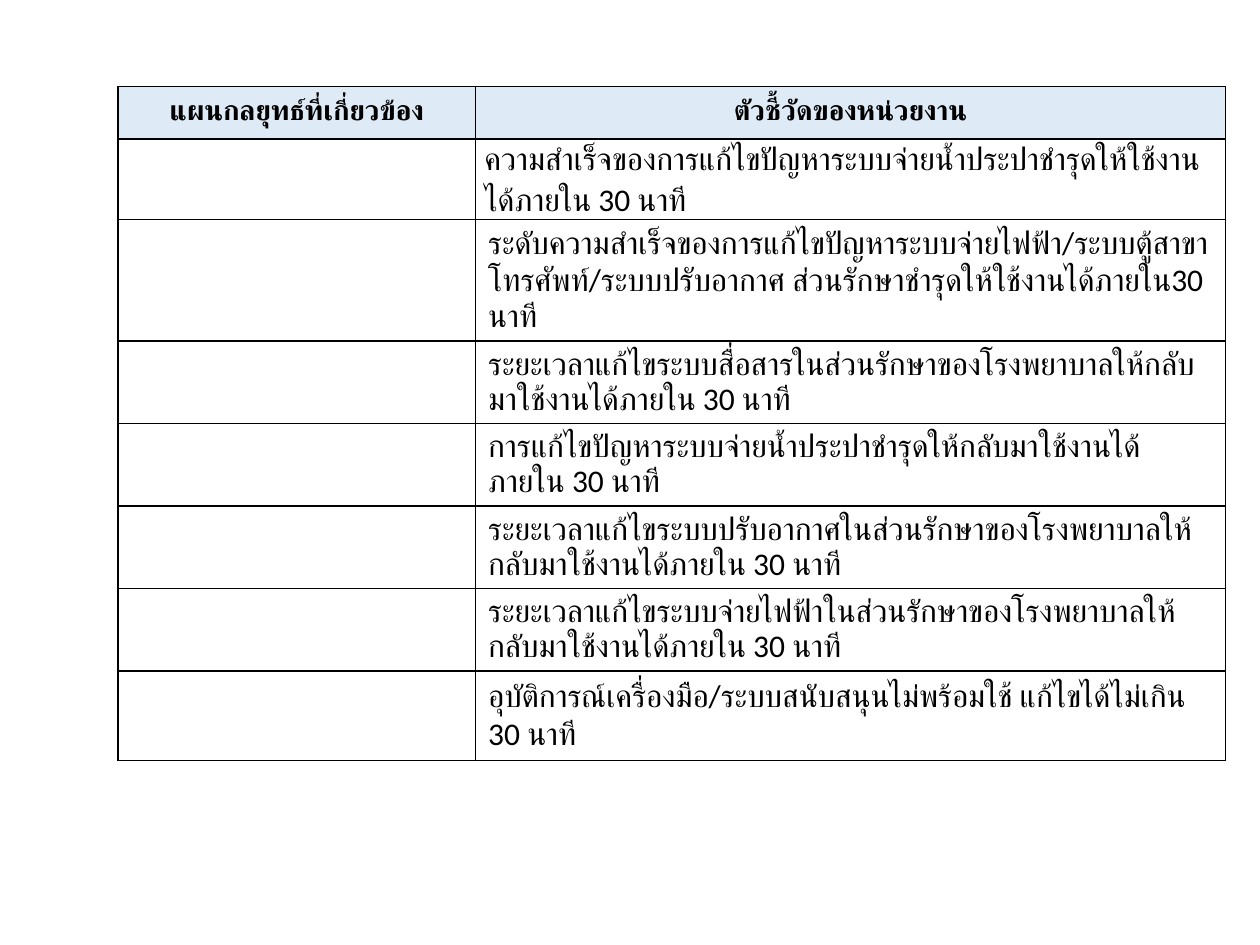
from lxml.etree import SubElement
from pptx import Presentation
from pptx.dml.color import RGBColor
from pptx.enum.text import MSO_ANCHOR, PP_ALIGN
from pptx.oxml.ns import qn
from pptx.util import Pt

COLORS = {"text": "000000", "border": "000000", "header": "DEEBF7"}
COLUMN_WIDTHS = [204.5, 428.4]
HEADER_HEIGHT = 30
ROW_HEIGHT = 21.6
HEADERS = ["แผนกลยุทธ์ที่เกี่ยวข้อง", "ตัวชี้วัดของหน่วยงาน"]
# Each indicator with its line spacing
INDICATORS = [
    ("ความสำเร็จของการแก้ไขปัญหาระบบจ่ายน้ำประปาชำรุดให้ใช้งานได้ภายใน 30 นาที", 1.05),
    ("ระดับความสำเร็จของการแก้ไขปัญหาระบบจ่ายไฟฟ้า/ระบบตู้สาขาโทรศัพท์/ระบบปรับอากาศ ส่วนรักษาชำรุดให้ใช้งานได้ภายใน30 นาที", 0.94),
    ("ระยะเวลาแก้ไขระบบสื่อสารในส่วนรักษาของโรงพยาบาลให้กลับมาใช้งานได้ภายใน 30 นาที", 0.91),
    ("การแก้ไขปัญหาระบบจ่ายน้ำประปาชำรุดให้กลับมาใช้งานได้ภายใน 30 นาที", 0.91),
    ("ระยะเวลาแก้ไขระบบปรับอากาศในส่วนรักษาของโรงพยาบาลให้กลับมาใช้งานได้ภายใน 30 นาที", 0.91),
    ("ระยะเวลาแก้ไขระบบจ่ายไฟฟ้าในส่วนรักษาของโรงพยาบาลให้กลับมาใช้งานได้ภายใน 30 นาที", 0.91),
    ("อุบัติการณ์เครื่องมือ/ระบบสนับสนุนไม่พร้อมใช้ แก้ไขได้ไม่เกิน 30 นาที", 1.0),
]


def write_text(cell, text, font="Calibri", size=18, bold=False,
               align=PP_ALIGN.LEFT, line_spacing=None):
    para = cell.text_frame.paragraphs[0]
    para.alignment = align
    para.line_spacing = line_spacing
    span = para.add_run()
    span.text = text
    span.font.name = font
    span.font.size = Pt(size)
    span.font.bold = bold
    span.font.color.rgb = RGBColor.from_string(COLORS["text"])
    # Thai is drawn with the complex-script font
    SubElement(span.font._element, qn("a:cs"), typeface=font)


def add_borders(cell):
    properties = cell._tc.get_or_add_tcPr()
    for index, side in enumerate(("lnL", "lnR", "lnT", "lnB")):
        line = SubElement(properties, qn(f"a:{side}"), w=str(Pt(1)))
        fill = SubElement(line, qn("a:solidFill"))
        SubElement(fill, qn("a:srgbClr"), val=COLORS["border"])
        properties.insert(index, line)


def style_cell(cell, fill=None):
    if fill:
        cell.fill.solid()
        cell.fill.fore_color.rgb = RGBColor.from_string(fill)
    else:
        cell.fill.background()
    add_borders(cell)


def add_indicator_table(page):
    row_count = len(INDICATORS) + 1
    table = page.shapes.add_table(
        row_count, len(HEADERS), Pt(67.3), Pt(49.4), Pt(sum(COLUMN_WIDTHS)),
        Pt(HEADER_HEIGHT + ROW_HEIGHT * len(INDICATORS))).table
    table.first_row = table.horz_banding = False
    for column, width in zip(table.columns, COLUMN_WIDTHS):
        column.width = Pt(width)
    for index, row in enumerate(table.rows):
        row.height = Pt(ROW_HEIGHT if index else HEADER_HEIGHT)
        for cell in row.cells:
            style_cell(cell, None if index else COLORS["header"])

    for cell, header in zip(table.rows[0].cells, HEADERS):
        cell.vertical_anchor = MSO_ANCHOR.MIDDLE
        cell.margin_top, cell.margin_bottom = Pt(2.5), Pt(4.8)
        write_text(cell, header, font="Cabin", size=16, bold=True,
                   align=PP_ALIGN.CENTER)
    for index, (indicator, spacing) in enumerate(INDICATORS, start=1):
        write_text(table.cell(index, 1), indicator, line_spacing=spacing)

    first_indicator = table.cell(1, 1)
    first_indicator.margin_left = first_indicator.margin_right = Pt(5)
    first_indicator.margin_top = first_indicator.margin_bottom = Pt(0)


def main():
    deck = Presentation()
    deck.slide_width, deck.slide_height = Pt(720), Pt(540)
    page = deck.slides.add_slide(deck.slide_layouts[6])
    add_indicator_table(page)
    deck.save("out.pptx")


if __name__ == "__main__":
    main()
